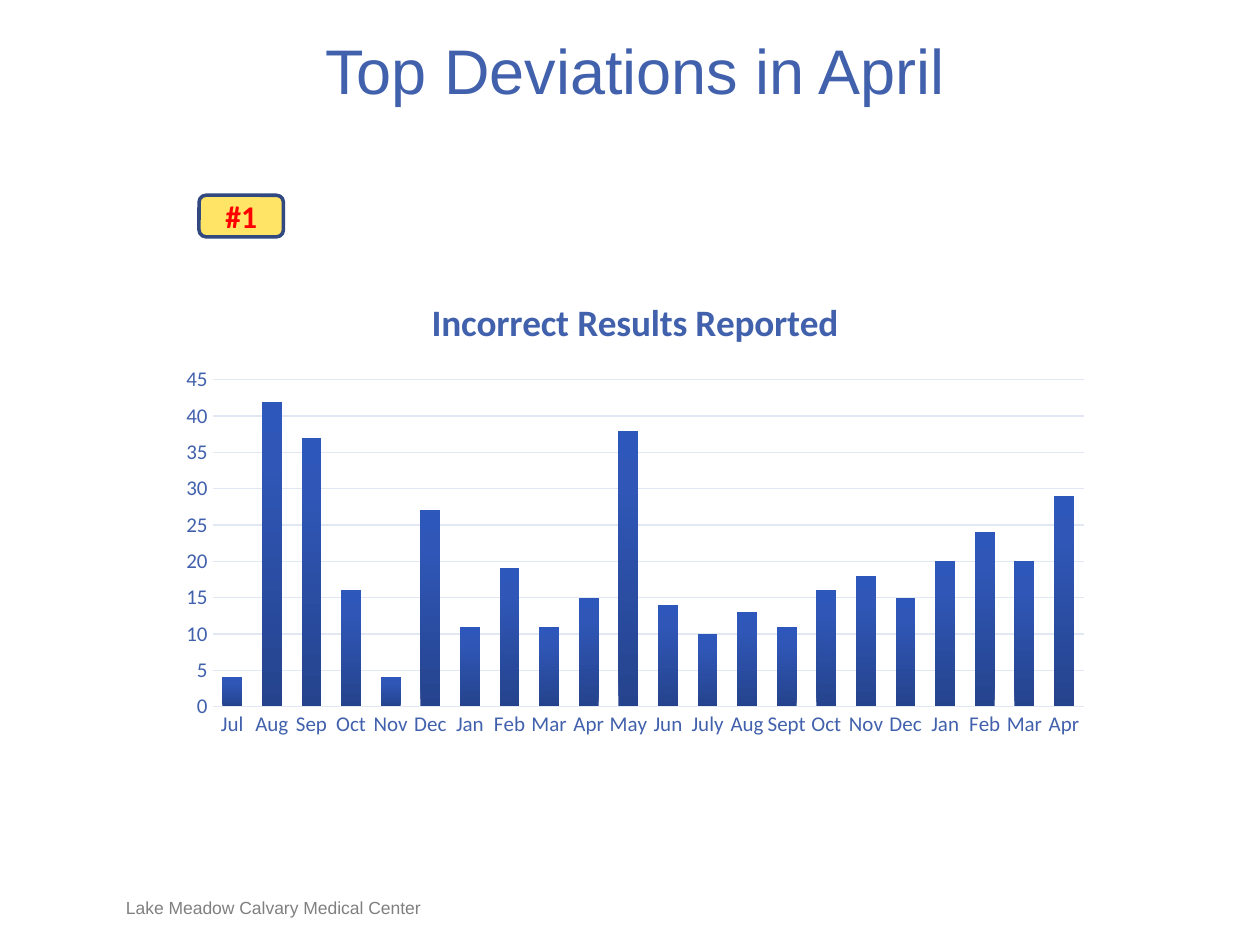
"""Build the slide on the top deviations in April."""
from copy import deepcopy
from dataclasses import dataclass
from typing import Any

from pptx import Presentation
from pptx.chart.data import CategoryChartData as ChartData
from pptx.dml.color import RGBColor
from pptx.enum.chart import XL_CHART_TYPE as ChartType, XL_TICK_MARK as TickMark
from pptx.enum.shapes import MSO_SHAPE as Preset
from pptx.enum.text import MSO_ANCHOR as Anchor, PP_ALIGN as Align
from pptx.oxml.ns import qn
from pptx.util import Inches, Pt

BLUE = "4261AD"
PALE = "E2E7F4"
CHART_TITLE = "Incorrect Results Reported"
MONTHS = ("Jul Aug Sep Oct Nov Dec Jan Feb Mar Apr May Jun "
          "July Aug Sept Oct Nov Dec Jan Feb Mar Apr").split()
COUNTS = [4, 42, 37, 16, 4, 27, 11, 19, 11, 15, 38, 14,
          10, 13, 11, 16, 18, 15, 20, 24, 20, 29]
BAR_STOPS = [(0, "25438D"), (0.8, "3057B7"), (1, "2E57BB")]


@dataclass(frozen=True)
class Style:
    name: str
    size: float
    color: str
    bold: bool = False


@dataclass(frozen=True)
class Label:
    text: str
    area: tuple[float, float, float, float]
    style: Style
    align: Any
    anchor: Any
    margin: float = 0


TITLE = Label("Top Deviations in April", (2.33, 0.25, 5.42, 0.61),
              Style("Arial", 36, BLUE), Align.CENTER, Anchor.TOP)
BADGE = Label("#1", (1.58, 1.55, 0.67, 0.33),
              Style("Calibri", 18, "FF0000", True), Align.CENTER, Anchor.MIDDLE, 0.05)
FOOTER = Label("Lake Meadow Calvary Medical Center", (1, 7.12, 3.17, 0.17),
               Style("Arial", 10, "808080"), Align.LEFT, Anchor.BOTTOM)
CHART_AREA = (1.33, 2.17, 7.42, 3.75)


def set_all(target: Any, values: dict[str, Any]) -> None:
    for name, value in values.items():
        setattr(target, name, value)


def paint(color: Any, value: str) -> None:
    color.rgb = RGBColor.from_string(value)


def style_font(font: Any, style: Style) -> None:
    set_all(font, {"name": style.name, "size": Pt(style.size), "bold": style.bold})
    paint(font.color, style.color)


def style_line(line: Any, color: str, width: float) -> None:
    line.width = Pt(width)
    paint(line.color, color)


def inches(area: tuple[float, ...]) -> list[int]:
    return [Inches(length) for length in area]


def write_label(box: Any, label: Label) -> None:
    set_all(box, dict(zip(("left", "top", "width", "height"), inches(label.area))))
    frame = box.text_frame
    sides = ("margin_left", "margin_top", "margin_right", "margin_bottom")
    set_all(frame, dict.fromkeys(sides, Inches(label.margin)))
    set_all(frame, {"word_wrap": True, "vertical_anchor": label.anchor})
    para = frame.paragraphs[0]
    para.alignment = label.align
    span = para.add_run()
    span.text = label.text
    style_font(span.font, label.style)


def add_badge(page: Any) -> None:
    badge = page.shapes.add_shape(Preset.ROUNDED_RECTANGLE, *inches(BADGE.area))
    badge.shadow.inherit = False
    badge.fill.solid()
    paint(badge.fill.fore_color, "FFE466")
    style_line(badge.line, "314880", 2)
    write_label(badge, BADGE)


def fill_bars(series: Any) -> None:
    fill = series.format.fill
    fill.gradient()
    fill.gradient_angle = 90
    stop_list = next(series._element.iter(qn("a:gsLst")))
    stop_list.append(deepcopy(stop_list[-1]))
    for stop, (position, color) in zip(fill.gradient_stops, BAR_STOPS):
        stop.position = position
        paint(stop.color, color)


def add_column_chart(page: Any) -> None:
    data = ChartData()
    data.categories = MONTHS
    data.add_series(CHART_TITLE, COUNTS)
    chart = page.shapes.add_chart(
        ChartType.COLUMN_CLUSTERED, *inches(CHART_AREA), data).chart
    set_all(chart, {"has_legend": False, "has_title": True})
    style_font(chart.font, Style("Calibri", 10, "000000"))
    title = chart.chart_title
    title.include_in_layout = False
    span = title.text_frame.paragraphs[0].add_run()
    span.text = CHART_TITLE
    style_font(span.font, Style("Calibri", 21.3, BLUE, True))

    months, counts = chart.category_axis, chart.value_axis
    for axis in (months, counts):
        set_all(axis, {"major_tick_mark": TickMark.NONE, "minor_tick_mark": TickMark.NONE})
        style_font(axis.tick_labels.font, Style("Calibri", 12, BLUE))
    style_line(months.format.line, PALE, 0.75)
    counts.format.line.fill.background()
    style_line(counts.major_gridlines.format.line, PALE, 0.75)
    set_all(counts, {"minimum_scale": 0, "maximum_scale": 45, "major_unit": 5})

    plot = chart.plots[0]
    set_all(plot, {"gap_width": 100, "overlap": -24, "vary_by_categories": False})
    fill_bars(plot.series[0])


def main() -> None:
    deck = Presentation()
    set_all(deck, {"slide_width": Inches(10), "slide_height": Inches(7.5)})
    page = deck.slides.add_slide(deck.slide_layouts[5])
    write_label(page.shapes.add_textbox(*inches(FOOTER.area)), FOOTER)
    write_label(page.shapes.title, TITLE)
    add_badge(page)
    add_column_chart(page)
    deck.save("out.pptx")


if __name__ == "__main__":
    main()
